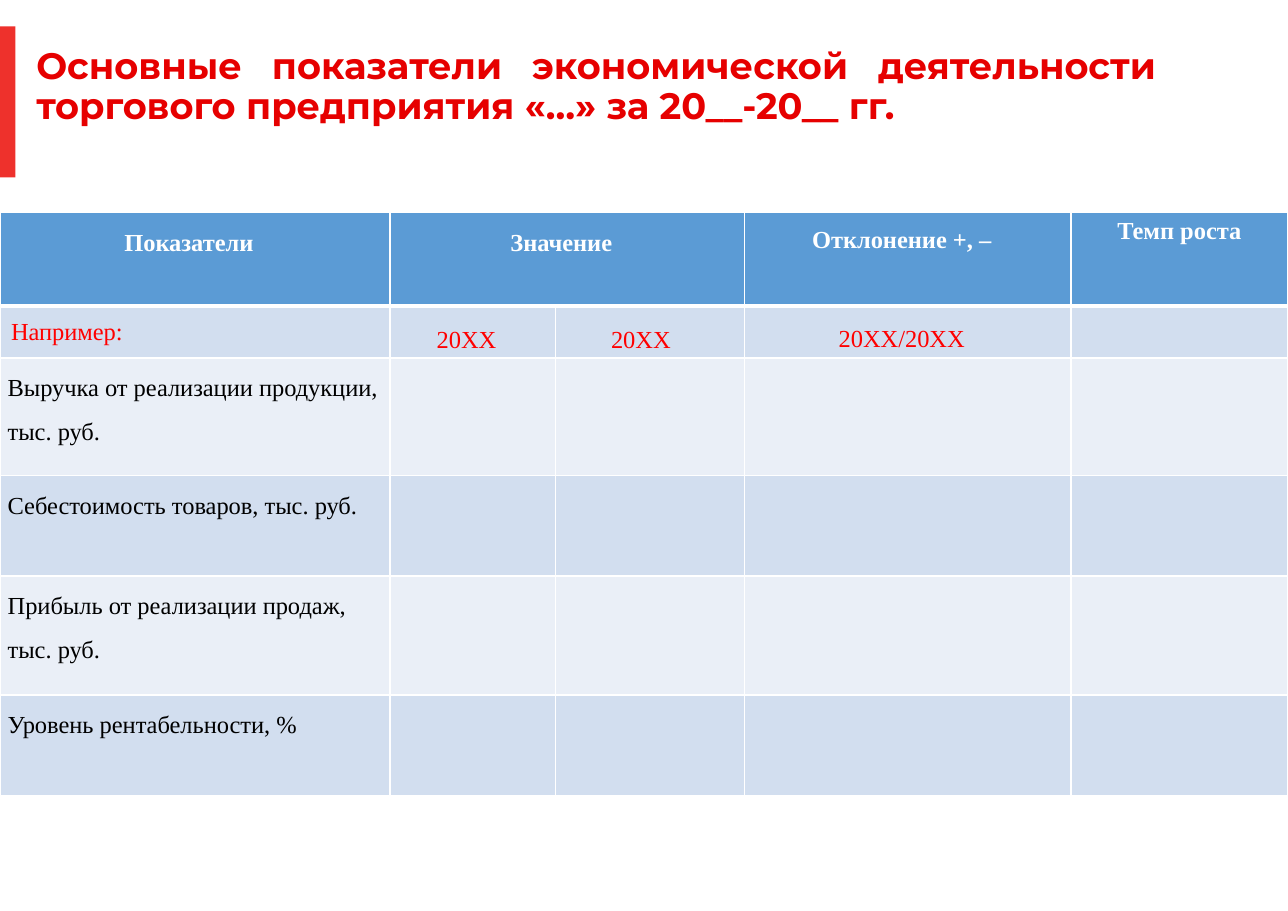
from lxml.etree import SubElement
from pptx import Presentation
from pptx.dml.color import RGBColor as Color
from pptx.enum.shapes import MSO_SHAPE as Shape
from pptx.enum.text import MSO_ANCHOR as Anchor, PP_ALIGN as Align
from pptx.oxml.ns import qn
from pptx.util import Inches, Pt

COLORS = {
    "white": "FFFFFF", "black": "000000", "accent": "EE312C", "title": "E60000",
    "header": "5B9BD5", "example": "FF0000", "dark band": "D2DEEF", "light band": "EAEFF7",
}
COLUMN_WIDTHS = [3.54, 1.5, 1.72, 2.96, 1.97]
ROW_HEIGHTS = [0.85, 0.47, 1.07, 0.91, 1.08, 0.91]
ROWS = [
    ["Показатели", "Значение", "", "Отклонение +, –", "Темп роста"],
    ["Например:", "20ХХ", "20ХХ ", "20ХХ/20ХХ", ""],
    ["Выручка от реализации продукции, тыс. руб."],
    ["Себестоимость товаров, тыс. руб."],
    ["Прибыль от реализации продаж, тыс. руб."],
    ["Уровень рентабельности, %"],
]
TABLE_FONT = {"name": "Times New Roman", "size": Pt(16)}
TITLE_FONT = {"name": "Montserrat", "size": Pt(24), "bold": True}
PLAIN_CELLS = {(0, 4), (1, 0)}


class SlideBuilder:
    """Draws styled elements on one slide."""

    def __init__(self, slide, colors):
        self.slide = slide
        self.colors = colors

    def color(self, name):
        return Color.from_string(self.colors[name])

    def apply(self, target, values):
        for name, value in values.items():
            setattr(target, name, value)

    def paint(self, target, color):
        target.fill.solid()
        target.fill.fore_color.rgb = self.color(color)

    def add_text(self, paragraph, text, color, font, layout):
        self.apply(paragraph, layout)
        run = paragraph.add_run()
        run.text = text
        self.apply(run.font, font)
        run.font.color.rgb = self.color(color)

    def bar(self, left, top, width, height, color):
        shape = self.slide.shapes.add_shape(
            Shape.RECTANGLE, Inches(left), Inches(top), Inches(width), Inches(height))
        shape.shadow.inherit = False
        shape.line.fill.background()
        self.paint(shape, color)

    def title(self, left, top, width, height, text):
        shape = self.slide.shapes.add_textbox(
            Inches(left), Inches(top), Inches(width), Inches(height))
        self.apply(shape.text_frame, {
            "word_wrap": True, "vertical_anchor": Anchor.MIDDLE, "margin_left": 0,
            "margin_right": 0, "margin_top": 0, "margin_bottom": 0})
        self.add_text(shape.text_frame.paragraphs[0], text, "title", TITLE_FONT,
                      {"alignment": Align.JUSTIFY, "line_spacing": 0.9})

    def borders(self, cell, widths):
        properties = cell._tc.get_or_add_tcPr()
        for side, width in widths.items():
            line = SubElement(properties, qn(f"a:ln{side}"), w=str(Pt(width)))
            fill = SubElement(line, qn("a:solidFill"))
            SubElement(fill, qn("a:srgbClr"), val=self.colors["white"])

    def cell_text(self, cell, text, row, column):
        centered = column > 0 or row == 0
        layout = {"alignment": Align.CENTER if centered else Align.LEFT}
        if (row, column) not in PLAIN_CELLS:
            layout |= {"line_spacing": 1.5 if column == 3 else 1.61, "space_after": Pt(0.6)}
            self.apply(cell, {
                "margin_left": Inches(0.07), "margin_top": 0, "margin_bottom": 0,
                "margin_right": Inches(0.18 if centered else 0.07)})
        color = {0: "white", 1: "example"}.get(row, "black")
        self.add_text(cell.text_frame.paragraphs[0], text, color,
                      TABLE_FONT | {"bold": row == 0}, layout)

    def table(self, left, top, rows, widths, heights):
        frame = self.slide.shapes.add_table(
            len(heights), len(widths), Inches(left), Inches(top),
            Inches(sum(widths)), Inches(sum(heights)))
        table = frame.table
        for column, width in zip(table.columns, widths):
            column.width = Inches(width)
        for row, height in zip(table.rows, heights):
            row.height = Inches(height)
        table.cell(0, 1).merge(table.cell(0, 2))
        for row, texts in enumerate(rows):
            band = "header" if row == 0 else "dark band" if row % 2 else "light band"
            for column in range(len(widths)):
                cell = table.cell(row, column)
                self.borders(cell, {"L": 1, "R": 1, "T": 3 if row == 1 else 1,
                                    "B": 3 if row == 0 else 1})
                self.paint(cell, band)
                if row == 1:
                    cell.vertical_anchor = Anchor.MIDDLE
                if column < len(texts) and texts[column]:
                    self.cell_text(cell, texts[column], row, column)


def main():
    presentation = Presentation()
    presentation.slide_width = Inches(11.69)
    presentation.slide_height = Inches(8.27)
    builder = SlideBuilder(presentation.slides.add_slide(presentation.slide_layouts[6]), COLORS)
    builder.bar(0, 0.24, 0.14, 1.37, "accent")
    builder.title(0.33, 0.43, 10.16, 0.73,
                  "Основные показатели экономической деятельности "
                  "торгового предприятия «…» за 20__-20__ гг.")
    builder.table(0, 1.93, ROWS, COLUMN_WIDTHS, ROW_HEIGHTS)
    presentation.save("out.pptx")


if __name__ == "__main__":
    main()
